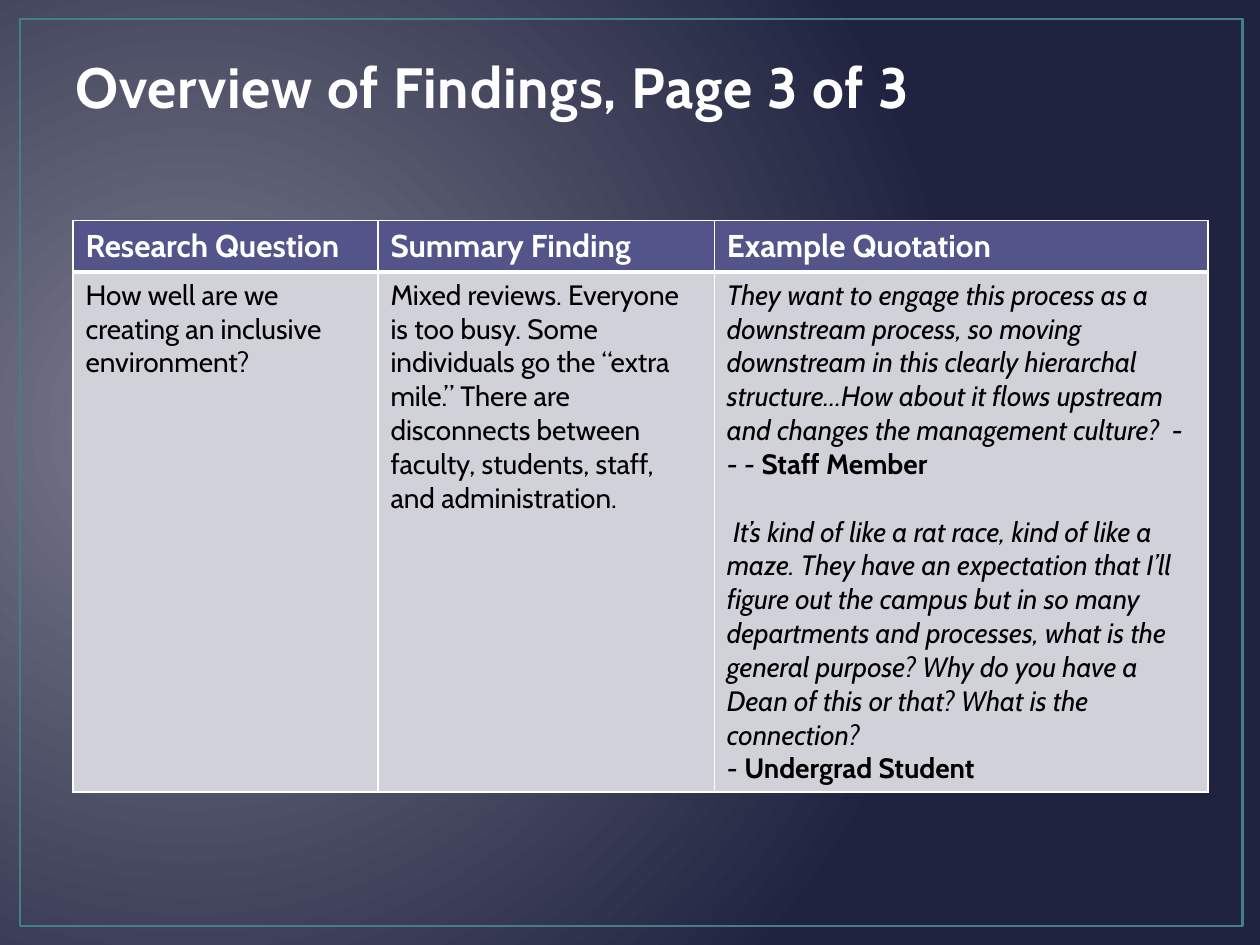
from lxml import etree
from pptx import Presentation, util as u
from pptx.dml.color import RGBColor
from pptx.enum import shapes, text
from pptx.oxml import ns

FONT = "Cabin"
GLOW, NAVY = RGBColor(0x7A, 0x7B, 0x8C), RGBColor(0x20, 0x23, 0x40)
TEAL = RGBColor(0x43, 0x80, 0x86)
PURPLE, PALE = RGBColor(0x53, 0x54, 0x8A), RGBColor(0xD1, 0xD1, 0xDA)
WHITE, BLACK = RGBColor(255, 255, 255), RGBColor(0, 0, 0)
CREAM, EDGE = RGBColor(0xFE, 0xFE, 0xFE), RGBColor(0x2A, 0x2A, 0x45)

WIDE, HIGH = 10, 7.5
COLS = [2.42, 2.67, 3.92]
ROWS = [0.41, 4.1]
PLAIN, BOLD, SLANT = (False, False), (True, False), (False, True)

# Each cell is a list of paragraphs; each paragraph a list of (words, style)
HEADS = ["Research Question", "Summary Finding", "Example Quotation"]
BODY = [
    [[("How well are we creating an inclusive environment?", PLAIN)]],
    [[("Mixed reviews. Everyone is too busy. Some individuals go the “extra "
       "mile.” There are disconnects between faculty, students, staff, and "
       "administration.", PLAIN)]],
    [[("They want to engage this process as a downstream process, so moving "
       "downstream in this clearly hierarchal structure…How about it flows "
       "upstream and changes the management culture?  - - - ", SLANT),
      ("Staff Member", BOLD)],
     [(" It’s kind of like a rat race, kind of like a maze. They have an "
       "expectation that I’ll figure out the campus but in so many "
       "departments and processes, what is the general purpose? Why do you "
       "have a Dean of this or that? What is the connection?", SLANT)],
     [("- ", SLANT), ("Undergrad Student", BOLD)]],
]
GAP = u.Pt(19.3)  # one line between the two quotations


def add_run(para, words, size, color, style):
    run = para.add_run()
    run.text = words
    font = run.font
    font.name, font.size = FONT, u.Pt(size)
    font.bold, font.italic = style
    font.color.rgb = color
    return run


def line_xml(tag, color, width):
    line = etree.Element(ns.qn(tag), w=str(int(u.Pt(width))))
    fill = etree.SubElement(line, ns.qn("a:solidFill"))
    etree.SubElement(fill, ns.qn("a:srgbClr"), val=str(color))
    return line


def paint_back(slide):
    fill = slide.background.fill
    fill.gradient()
    for stop, color, pos in zip(fill.gradient_stops, (GLOW, NAVY), (0, 1)):
        stop.color.rgb, stop.position = color, pos
    # Swap the linear ramp for a circular one
    lin = next(slide.element.iter(ns.qn("a:lin")))
    ring = etree.Element(ns.qn("a:path"), path="circle")
    etree.SubElement(ring, ns.qn("a:fillToRect"),
                     l="15000", t="50000", r="85000", b="60000")
    lin.getparent().replace(lin, ring)


def add_frame(slide, box):
    frame = slide.shapes.add_shape(shapes.MSO_SHAPE.RECTANGLE, *box)
    frame.shadow.inherit = False
    frame.fill.background()
    frame.line.color.rgb, frame.line.width = TEAL, u.Pt(1.5)


def set_title(slide, box, words):
    title = slide.shapes.title
    title.left, title.top, title.width, title.height = box
    area = title.text_frame
    area.word_wrap = True
    area.auto_size = text.MSO_AUTO_SIZE.NONE
    area.vertical_anchor = text.MSO_ANCHOR.BOTTOM
    para = area.paragraphs[0]
    para.alignment = text.PP_ALIGN.LEFT
    run = add_run(para, words, 32.4, CREAM, BOLD)
    props = run.font._element
    props.set("spc", "50")
    props.insert(0, line_xml("a:ln", EDGE, 1.05))


def fill_cell(cell, paras, size, color, fill, top, base):
    cell.fill.solid()
    cell.fill.fore_color.rgb = fill
    props = cell._tc.get_or_add_tcPr()
    for i, (side, width) in enumerate(zip("LRTB", (1, 1, top, base))):
        props.insert(i, line_xml("a:ln" + side, WHITE, width))
    area = cell.text_frame
    for i, runs in enumerate(paras):
        para = area.add_paragraph() if i else area.paragraphs[0]
        if i == 1:
            para.space_before = GAP
        for words, style in runs:
            add_run(para, words, size, color, style)


def add_grid(slide, box):
    table = slide.shapes.add_table(len(ROWS), len(COLS), *box).table
    table.horz_banding = False
    for col, width in zip(table.columns, COLS):
        col.width = u.Inches(width)
    for row, height in zip(table.rows, ROWS):
        row.height = u.Inches(height)
    for i, (head, body) in enumerate(zip(HEADS, BODY)):
        fill_cell(table.cell(0, i), [[(head, BOLD)]], 18, WHITE, PURPLE, 1, 3)
        fill_cell(table.cell(1, i), body, 16, BLACK, PALE, 3, 1)


def inches(*sides):
    return [u.Inches(side) for side in sides]


def main():
    deck = Presentation()
    deck.slide_width, deck.slide_height = inches(WIDE, HIGH)
    slide = deck.slides.add_slide(deck.slide_layouts[5])
    paint_back(slide)
    add_frame(slide, inches(0.16, 0.15, 0.97 * WIDE, 0.96 * HIGH))
    set_title(slide, inches(0.5, 0.3, 0.9 * WIDE, 0.7),
              "Overview of Findings, Page 3 of 3")
    add_grid(slide, inches(0.58, 1.75, sum(COLS), sum(ROWS)))
    deck.save("out.pptx")


if __name__ == "__main__":
    main()
